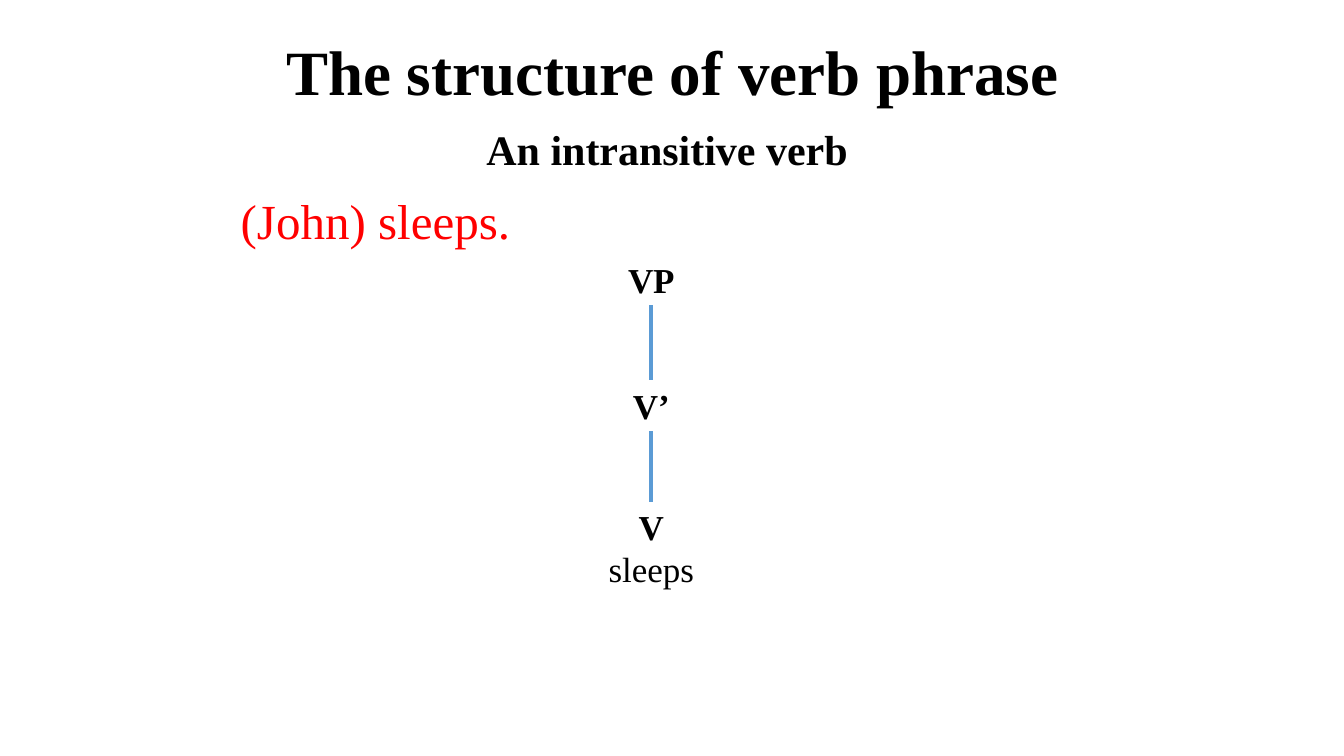
from pptx import Presentation
from pptx.dml.color import RGBColor as RGB
from pptx.enum.shapes import MSO_CONNECTOR as LINK, MSO_SHAPE as SHAPE
from pptx.enum.text import MSO_ANCHOR as ANCHOR, PP_ALIGN as ALIGN
from pptx.oxml.xmlchemy import OxmlElement
from pptx.util import Inches, Pt

FONT = "Times New Roman"
COLORS = {"ink": "000000", "red": "FF0000", "blue": "5B9BD5", "white": "FFFFFF"}


def tint(name):
    """Return the named colour."""
    return RGB.from_string(COLORS[name])


def write(shape, lines, size, color="ink", anchor=ANCHOR.MIDDLE):
    """Fill a shape with centred lines, each a pair of text and boldness."""
    frame = shape.text_frame
    frame.word_wrap = True
    frame.vertical_anchor = anchor
    frame.text = "\n".join(text for text, bold in lines)
    for para, (text, bold) in zip(frame.paragraphs, lines):
        para.alignment = ALIGN.CENTER
        font = para.runs[0].font
        font.name, font.size, font.bold = FONT, Pt(size), bold
        font.color.rgb = tint(color)
    return shape


def add_box(slide, left, top, width, height):
    """Add a text box with its place in inches."""
    return slide.shapes.add_textbox(*map(Inches, (left, top, width, height)))


def add_head(slide, left, top, width):
    """Place the title and the subtitle under it."""
    title = add_box(slide, left, top, width, 0.7)
    write(title, [("The structure of verb phrase", True)], 45)
    body = add_box(slide, left, top + 0.83, width, 5.58)
    write(body, [("An intransitive verb ", True)], 30, anchor=ANCHOR.TOP)
    for box in (title, body):
        box.text_frame.paragraphs[0].line_spacing = 0.9
    body.text_frame.paragraphs[0].space_before = Pt(10)


def add_case(slide, left, top, width, height):
    """Place the example sentence on a white panel."""
    place = map(Inches, (left, top, width, height))
    panel = slide.shapes.add_shape(SHAPE.RECTANGLE, *place)
    panel.shadow.inherit = False
    panel.fill.solid()
    panel.fill.fore_color.rgb = tint("white")
    panel.line.fill.background()
    write(panel, [("(John) sleeps.", False)], 35, "red")


def add_branch(slide, parent, child):
    """Join the bottom of a parent node to the top of its child."""
    branch = slide.shapes.add_connector(LINK.STRAIGHT, 0, 0, 0, 0)
    branch.begin_connect(parent, 2)
    branch.end_connect(child, 0)
    branch.line.color.rgb = tint("blue")
    branch.line.width = Pt(3)
    branch._element.spPr.append(OxmlElement("a:effectLst"))


def add_tree(slide, mid, top):
    """Stack the tree nodes around a middle line and join them."""
    specs = [
        (0, 0.87, 0.51, [("VP", True)]),
        (1.25, 0.87, 0.51, [("V’", True)]),
        (2.46, 1.51, 0.91, [("V", True), ("sleeps", False)]),
    ]
    nodes = [
        write(add_box(slide, mid - width / 2, top + drop, width, height), lines, 25)
        for drop, width, height, lines in specs
    ]
    for parent, child in zip(nodes, nodes[1:]):
        add_branch(slide, parent, child)


def main():
    """Build the slide and save it."""
    deck = Presentation()
    deck.slide_width, deck.slide_height = Inches(13.33), Inches(7.5)
    slide = deck.slides.add_slide(deck.slide_layouts[6])
    add_head(slide, 0.92, 0.4, 11.5)
    add_tree(slide, 6.46, 2.52)
    add_case(slide, 2.14, 1.86, 3.17, 0.65)
    deck.save("out.pptx")


if __name__ == "__main__":
    main()
